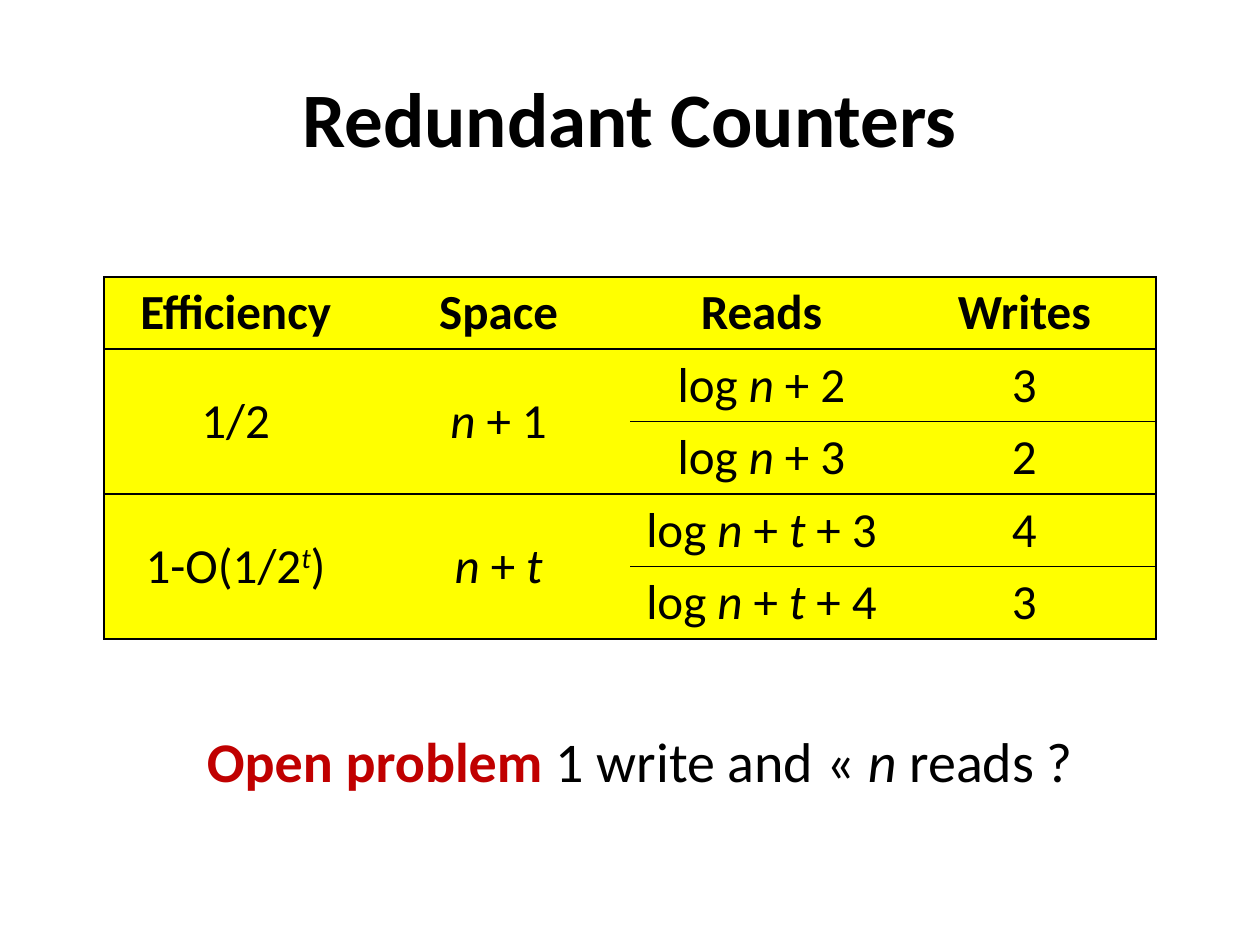
from lxml.etree import SubElement
from pptx import Presentation
from pptx.dml.color import RGBColor
from pptx.enum.text import MSO_ANCHOR, PP_ALIGN
from pptx.oxml.ns import qn
from pptx.util import Cm, Pt

BLACK = RGBColor(0x00, 0x00, 0x00)
RED = RGBColor(0xC0, 0x00, 0x00)
YELLOW = RGBColor(0xFF, 0xFF, 0x00)
FONT = "Calibri"

# Text between asterisks is italic; a leading ^ makes it superscript.
TITLE = "Redundant Counters"
HEADER = ["Efficiency", "Space", "Reads", "Writes"]
GROUPS = [
    ("1/2", "*n *+ 1", [("log *n* + 2", "3"), ("log *n* + 3", "2")]),
    ("1-O(1/2*^t*)", "*n *+ *t*",
     [("log *n* + *t* + 3", "4"), ("log *n* + *t* + 4", "3")]),
]
PROBLEM_LABEL = "Open problem"
PROBLEM = " 1 write and « *n *reads ?"

TABLE_LEFT, TABLE_TOP = 2.1, 5.58
COL_WIDTH, ROW_HEIGHT = 5.3, 1.46


def add_runs(p, marked, size, color=BLACK, bold=False):
    for i, part in enumerate(marked.split("*")):
        if not part:
            continue
        r = p.add_run()
        r.text = part.lstrip("^")
        f = r.font
        f.name, f.size, f.bold, f.italic = FONT, Pt(size), bold, i % 2 == 1
        f.color.rgb = color
        if part.startswith("^"):
            r._r.get_or_add_rPr().set("baseline", "30000")


def add_text_box(slide, left, top, width, height):
    tf = slide.shapes.add_textbox(Cm(left), Cm(top), Cm(width), Cm(height)).text_frame
    tf.word_wrap = True
    p = tf.paragraphs[0]
    p.alignment = PP_ALIGN.CENTER
    return tf, p


def set_borders(cell, sides):
    """Draw the named sides (L, R, T, B) in black and hide the others."""
    tcPr = cell._tc.get_or_add_tcPr()
    for side in "LRTB":
        ln = SubElement(tcPr, qn(f"a:ln{side}"), w=str(Pt(1)))
        if side in sides:
            fill = SubElement(ln, qn("a:solidFill"))
            SubElement(fill, qn("a:srgbClr"), val=str(BLACK))
        else:
            SubElement(ln, qn("a:noFill"))


def fill_cell(cell, marked, bold):
    cell.vertical_anchor = MSO_ANCHOR.MIDDLE
    p = cell.text_frame.paragraphs[0]
    p.alignment = PP_ALIGN.CENTER
    add_runs(p, marked, 28, bold=bold)


def add_counter_table(slide):
    rows = [HEADER]
    for efficiency, space, costs in GROUPS:
        for i, cost in enumerate(costs):
            rows.append([*((efficiency, space) if i == 0 else ("", "")), *cost])
    n_rows, n_cols = len(rows), len(HEADER)
    table = slide.shapes.add_table(
        n_rows, n_cols, Cm(TABLE_LEFT), Cm(TABLE_TOP),
        Cm(n_cols * COL_WIDTH), Cm(n_rows * ROW_HEIGHT)).table
    table.first_row = table.horz_banding = False
    for col in table.columns:
        col.width = Cm(COL_WIDTH)
    for row in table.rows:
        row.height = Cm(ROW_HEIGHT)

    top = 1
    for *_, costs in GROUPS:
        for c in range(2):
            table.cell(top, c).merge(table.cell(top + len(costs) - 1, c))
        top += len(costs)

    for r, row in enumerate(rows):
        for c, marked in enumerate(row):
            cell = table.cell(r, c)
            sides = "B" if cell.is_spanned else "TB"
            sides += {0: "L", n_cols - 1: "R"}.get(c, "")
            set_borders(cell, sides)
            cell.fill.solid()
            cell.fill.fore_color.rgb = YELLOW
            if marked:
                fill_cell(cell, marked, bold=r == 0)


def main():
    prs = Presentation()
    prs.slide_width, prs.slide_height = Cm(25.4), Cm(19.05)
    slide = prs.slides.add_slide(prs.slide_layouts[6])

    tf, p = add_text_box(slide, 1.27, 0.76, 22.86, 3.18)
    tf.vertical_anchor = MSO_ANCHOR.MIDDLE
    add_runs(p, TITLE, 44, bold=True)

    add_counter_table(slide)

    tf, p = add_text_box(slide, 2.3, 14.53, 21.2, 1.8)
    p.space_before = Pt(6)
    add_runs(p, PROBLEM_LABEL, 32, RED, bold=True)
    add_runs(p, PROBLEM, 32)

    prs.save("out.pptx")


if __name__ == "__main__":
    main()
